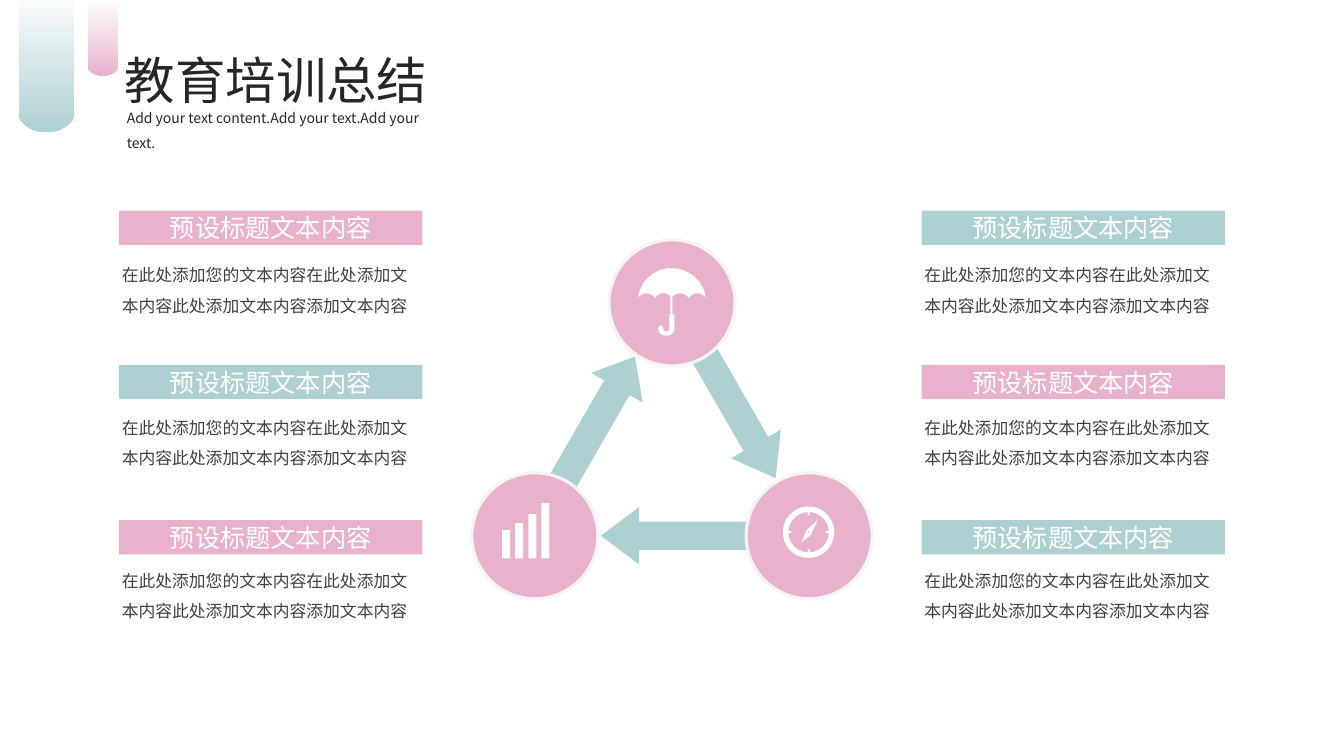
import math
import lxml.etree
import pptx
import pptx.dml.color
import pptx.enum.shapes
import pptx.enum.text
import pptx.oxml.ns
import pptx.util

Inches = pptx.util.Inches
RGBColor = pptx.dml.color.RGBColor
SHAPE = pptx.enum.shapes.MSO_SHAPE
ANCHOR = pptx.enum.text.MSO_ANCHOR
ALIGN = pptx.enum.text.PP_ALIGN
AUTO_SIZE = pptx.enum.text.MSO_AUTO_SIZE

PINK = RGBColor(0xE8, 0xB2, 0xCC)
TEAL = RGBColor(0xAF, 0xD0, 0xD2)
WHITE = RGBColor(0xFF, 0xFF, 0xFF)
RIM = RGBColor(0xF4, 0xF4, 0xF4)
INK = RGBColor(0x26, 0x26, 0x26)
GRAY = RGBColor(0x40, 0x40, 0x40)
FONT = "Noto Sans CJK SC"

TITLE = "教育培训总结"
SUBTITLE = "Add your text content.Add your text.Add your text."
HEADING = "预设标题文本内容"
BODY = "在此处添加您的文本内容在此处添加文本内容此处添加文本内容添加文本内容"

TABS = [(0.19, 0.73, -0.31, 1.14, 1.31, TEAL), (0.87, 1.17, -0.13, 0.66, 0.75, PINK)]
COLUMNS = [(1.18, (PINK, TEAL, PINK)), (9.14, (TEAL, PINK, TEAL))]
HEADING_TOPS = (2.09, 3.62, 5.16)
BODY_TOPS = (2.48, 3.99, 5.51)
ARROWS = [
    ((6.5, 3.77, 1.59, 0.57), 60, 0.687),
    ((5.21, 3.87, 1.45, 0.59), 300, 0.605),
    ((5.96, 5.03, 1.54, 0.57), 180, 0.663),
]
CIRCLES = [(7.4, 4.69), (6.04, 2.38), (4.68, 4.69)]
BAR_HEIGHTS = (0.28, 0.35, 0.44, 0.55)
COMPASS = (8.02, 5.28)
NEEDLE = [(7.95, 5.38), (8.04, 5.31), (8.05, 5.29), (8.11, 5.16), (8, 5.26), (7.99, 5.28)]
UMBRELLA = [
    (6.66, 2.66),
    (6.49, 2.66, 6.35, 2.79, 6.33, 2.95),
    (6.35, 2.93, 6.38, 2.91, 6.41, 2.91),
    (6.45, 2.91, 6.48, 2.93, 6.5, 2.96),
    (6.51, 2.93, 6.54, 2.91, 6.58, 2.91),
    (6.61, 2.91, 6.63, 2.92, 6.65, 2.94),
    (6.65, 3.12), (6.64, 3.12), (6.64, 3.26),
    (6.64, 3.28, 6.62, 3.29, 6.61, 3.29),
    (6.59, 3.29, 6.58, 3.28, 6.58, 3.26),
    (6.58, 3.25, 6.57, 3.23, 6.55, 3.23),
    (6.54, 3.23, 6.53, 3.24, 6.53, 3.26),
    (6.53, 3.3, 6.56, 3.33, 6.61, 3.33),
    (6.66, 3.33, 6.69, 3.3, 6.69, 3.26),
    (6.69, 3.12), (6.67, 3.12), (6.67, 2.94),
    (6.69, 2.92, 6.72, 2.91, 6.75, 2.91),
    (6.78, 2.91, 6.82, 2.93, 6.83, 2.96),
    (6.85, 2.93, 6.88, 2.91, 6.92, 2.91),
    (6.95, 2.91, 6.98, 2.93, 7, 2.95),
    (6.98, 2.79, 6.83, 2.66, 6.66, 2.66),
]


def flatten(segments, steps=10):
    points = [segments[0]]
    for segment in segments[1:]:
        if len(segment) == 2:
            points.append(segment)
            continue
        controls = [points[-1], segment[:2], segment[2:4], segment[4:]]
        for step in range(1, steps + 1):
            t = step / steps
            weights = ((1 - t) ** 3, 3 * t * (1 - t) ** 2, 3 * t * t * (1 - t), t ** 3)
            points.append(tuple(
                sum(w * control[axis] for w, control in zip(weights, controls))
                for axis in (0, 1)))
    return points


def arc(center, radius, start=0, end=360, steps=60):
    angles = [math.radians(start + (end - start) * i / steps) for i in range(steps + 1)]
    return [(center[0] + radius * math.cos(a), center[1] + radius * math.sin(a)) for a in angles]


def notched_circle(center, radius, notch_radius, half_width):
    points = []
    margin = math.degrees(math.asin(half_width / radius))
    inner_margin = math.degrees(math.asin(half_width / notch_radius))
    for quarter in range(0, 360, 90):
        points += arc(center, notch_radius, quarter - inner_margin, quarter + inner_margin, 1)
        points += arc(center, radius, quarter + margin, quarter + 90 - margin, 15)
    return points


def paint(shape, fill, rim=None):
    shape.shadow.inherit = False
    if fill is not None:
        shape.fill.solid()
        shape.fill.fore_color.rgb = fill
    if rim is None:
        shape.line.fill.background()
    else:
        shape.line.color.rgb = rim
        shape.line.width = pptx.util.Pt(2.25)
    return shape


def add_preset(slide, kind, box, fill, rim=None):
    return paint(slide.shapes.add_shape(kind, *map(Inches, box)), fill, rim)


def add_outline(slide, contours, fill=None):
    contours = [[(Inches(x), Inches(y)) for x, y in contour] for contour in contours]
    builder = slide.shapes.build_freeform(*contours[0][0], scale=1.0)
    for index, contour in enumerate(contours):
        if index:
            builder.move_to(*contour[0])
        builder.add_line_segments(contour[1:], close=True)
    return paint(builder.convert_to_shape(), fill)


def write(shape, text, size, color, frame_format, paragraph_format):
    frame = shape.text_frame
    for name, value in frame_format.items():
        setattr(frame, name, value)
    paragraph = frame.paragraphs[0]
    for name, value in paragraph_format.items():
        setattr(paragraph, name, value)
    run = paragraph.add_run()
    run.text = text
    for name, value in {"size": pptx.util.Pt(size), "name": FONT}.items():
        setattr(run.font, name, value)
    run.font.color.rgb = color
    east_asian = lxml.etree.SubElement(run._r.get_or_add_rPr(), pptx.oxml.ns.qn("a:ea"))
    east_asian.set("typeface", FONT)


def add_text(slide, box, text, size, color, spacing=1.0, wrap=True):
    shape = slide.shapes.add_textbox(*map(Inches, box))
    write(shape, text, size, color,
          {"word_wrap": wrap, "auto_size": AUTO_SIZE.SHAPE_TO_FIT_TEXT},
          {"line_spacing": spacing})


def add_tab(slide, left, right, top, shoulder, bottom, color):
    middle = (left + right) / 2
    bend = (right - left) / 4
    tab = add_outline(slide, [flatten([
        (left, top), (right, top), (right, shoulder),
        (right, (shoulder + bottom) / 2, middle + bend, bottom, middle, bottom),
        (middle - bend, bottom, left, (shoulder + bottom) / 2, left, shoulder)])])
    tab.fill.gradient()
    tab.fill.gradient_angle = 270
    for stop, position, stop_color in zip(tab.fill.gradient_stops, (0.13, 1), (WHITE, color)):
        stop.position = position
        stop.color.rgb = stop_color


def add_cycle(slide):
    for box, rotation, head in ARROWS:
        arrow = add_preset(slide, SHAPE.RIGHT_ARROW, box, TEAL)
        arrow.rotation = rotation
        arrow.adjustments[0] = 0.494
        arrow.adjustments[1] = head
    for left, top in CIRCLES:
        add_preset(slide, SHAPE.OVAL, (left, top, 1.25, 1.25), PINK, RIM)
    add_outline(slide, [flatten(UMBRELLA)], WHITE)
    add_outline(slide, [arc(COMPASS, 0.255), notched_circle(COMPASS, 0.2, 0.17, 0.01)], WHITE)
    add_outline(slide, [NEEDLE, arc(COMPASS, 0.01, steps=16)], WHITE)
    add_preset(slide, SHAPE.OVAL, (8.01, 5.28, 0.01, 0.01), WHITE)
    for index, height in enumerate(BAR_HEIGHTS):
        add_preset(slide, SHAPE.RECTANGLE, (4.98 + 0.13 * index, 5.54 - height, 0.08, height), WHITE)


def add_column(slide, left, colors):
    no_margins = {f"margin_{side}": 0 for side in ("left", "right", "top", "bottom")}
    for heading_top, body_top, color in zip(HEADING_TOPS, BODY_TOPS, colors):
        add_text(slide, (left - 0.07, body_top, 3.07, 0.71), BODY, 12, GRAY, 1.5)
        heading = add_preset(slide, SHAPE.RECTANGLE, (left, heading_top, 3.01, 0.34), color)
        write(heading, HEADING, 18, WHITE,
              {**no_margins, "vertical_anchor": ANCHOR.MIDDLE}, {"alignment": ALIGN.CENTER})


def main():
    presentation = pptx.Presentation()
    presentation.slide_width = Inches(13.33)
    presentation.slide_height = Inches(7.5)
    slide = presentation.slides.add_slide(presentation.slide_layouts[6])
    for tab in TABS:
        add_tab(slide, *tab)
    add_text(slide, (1.14, 0.44, 3.61, 0.71), TITLE, 36, INK)
    add_text(slide, (1.16, 0.95, 3.4, 0.35), SUBTITLE, 10, INK, 1.5, False)
    add_cycle(slide)
    for left, colors in COLUMNS:
        add_column(slide, left, colors)
    presentation.save("out.pptx")


if __name__ == "__main__":
    main()
